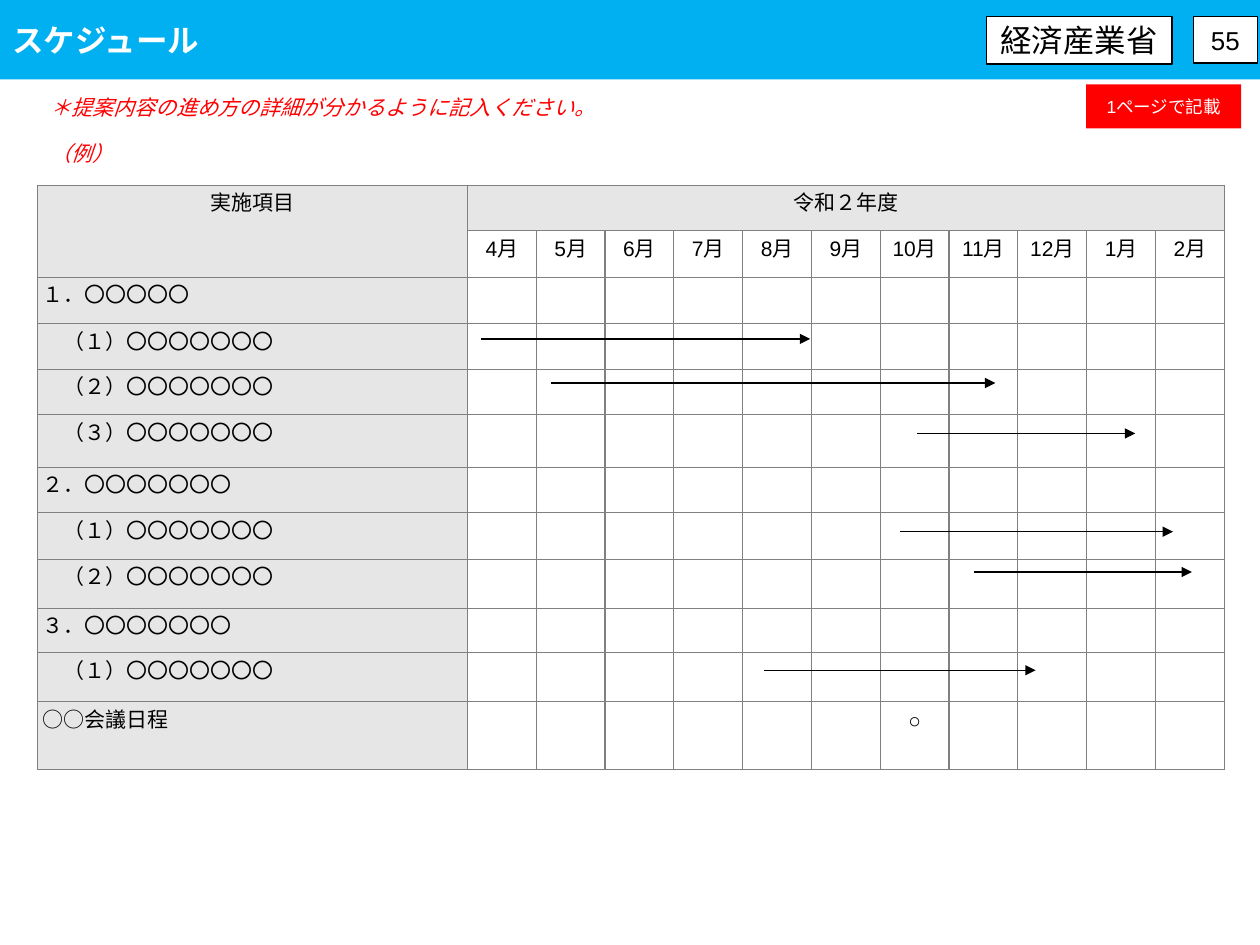
from lxml.etree import SubElement
from pptx import Presentation
from pptx.dml.color import RGBColor
from pptx.enum.shapes import MSO_CONNECTOR, MSO_SHAPE
from pptx.enum.text import MSO_ANCHOR, PP_ALIGN
from pptx.oxml import parse_xml
from pptx.oxml.ns import nsdecls, qn
from pptx.util import Inches, Pt

BLACK, WHITE, RED = "000000", "FFFFFF", "FF0000"
HEADER_BLUE, GRAY, BORDER_GRAY = "00B0F0", "E6E6E6", "808080"


def color(hex_string):
    return RGBColor.from_string(hex_string)


class SlideBuilder:
    font_name = "Arial"
    text_size = 12

    def __init__(self, slide):
        self.slide = slide

    def style(self, paragraph, size=None, text_color=BLACK, align=PP_ALIGN.LEFT,
              font_name=None, bold=False, italic=False):
        paragraph.alignment = align
        font = paragraph.font
        font.name = font_name or self.font_name
        font.size = Pt(size or self.text_size)
        font.bold, font.italic = bold, italic
        font.color.rgb = color(text_color)

    def box(self, text, left, top, width, height, fill, line_width=0,
            align=PP_ALIGN.CENTER, **text_style):
        shape = self.slide.shapes.add_shape(
            MSO_SHAPE.RECTANGLE, *map(Inches, (left, top, width, height)))
        shape.shadow.inherit = False
        shape.fill.solid()
        shape.fill.fore_color.rgb = color(fill)
        if line_width:
            shape.line.color.rgb = color(BLACK)
            shape.line.width = Pt(line_width)
        else:
            shape.line.fill.background()
        frame = shape.text_frame
        frame.vertical_anchor = MSO_ANCHOR.MIDDLE
        frame.text = text
        self.style(frame.paragraphs[0], align=align, **text_style)

    def notes(self, lines, left, top, width, height, gap):
        frame = self.slide.shapes.add_textbox(
            *map(Inches, (left, top, width, height))).text_frame
        frame.word_wrap = True
        frame.text = "\n".join(lines)
        for paragraph in frame.paragraphs:
            self.style(paragraph, text_color=RED, italic=True)
        for paragraph in frame.paragraphs[1:]:
            paragraph.space_before = Pt(gap)

    def table(self, left, top, column_widths, row_heights):
        table = self.slide.shapes.add_table(
            len(row_heights), len(column_widths), Inches(left), Inches(top),
            Inches(sum(column_widths)), Inches(sum(row_heights))).table
        table.first_row = table.horz_banding = False
        for column, width in zip(table.columns, column_widths):
            column.width = Inches(width)
        for row, height in zip(table.rows, row_heights):
            row.height = Inches(height)
            for cell in row.cells:
                self.cell(cell)
        return table

    def cell(self, cell, text="", fill=None, align=PP_ALIGN.CENTER):
        cell.margin_left = cell.margin_right = Inches(0.04)
        cell.margin_top = cell.margin_bottom = 0
        cell.text = text
        paragraph = cell.text_frame.paragraphs[0]
        paragraph.line_spacing = Pt(18.1)
        self.style(paragraph, align=align)
        properties = cell._tc.get_or_add_tcPr()
        for border in properties.findall("*"):
            properties.remove(border)
        for side in ("lnL", "lnR", "lnT", "lnB"):
            properties.append(parse_xml(
                f'<a:{side} {nsdecls("a")} w="{Pt(0.75)}"><a:solidFill>'
                f'<a:srgbClr val="{BORDER_GRAY}"/></a:solidFill></a:{side}>'))
        if fill:
            cell.fill.solid()
            cell.fill.fore_color.rgb = color(fill)
        else:
            cell.fill.background()

    def arrow(self, start, end, y):
        connector = self.slide.shapes.add_connector(
            MSO_CONNECTOR.STRAIGHT, *map(Inches, (start, y, end, y)))
        connector.line.color.rgb = color(BLACK)
        connector.line.width = Pt(0.75)
        SubElement(connector.line._get_or_add_ln(), qn("a:tailEnd"), type="triangle")
        SubElement(connector._element.spPr, qn("a:effectLst"))


def main():
    presentation = Presentation()
    presentation.slide_width, presentation.slide_height = Inches(10), Inches(7.5)
    builder = SlideBuilder(presentation.slides.add_slide(presentation.slide_layouts[6]))

    # Title bar and instructions
    builder.box("スケジュール", 0, 0, 10, 0.63, HEADER_BLUE, align=PP_ALIGN.LEFT,
                size=18, text_color=WHITE, font_name="Noto Sans CJK JP", bold=True)
    builder.notes(["＊提案内容の進め方の詳細が分かるように記入ください。", "（例）"],
                  0.3, 0.7, 9.42, 0.94, gap=12)
    builder.box("経済産業省", 7.83, 0.13, 1.47, 0.38, WHITE, line_width=1, size=18)

    # Schedule table
    months = [f"{month}月" for month in (*range(4, 13), 1, 2)]
    item = "〇〇〇〇〇〇〇"
    tasks = ["１．〇〇〇〇〇", f"　（１）{item}", f"　（２）{item}", f"　（３）{item}",
             f"２．{item}", f"　（１）{item}", f"　（２）{item}",
             f"３．{item}", f"　（１）{item}", "○○会議日程"]
    item_width, table_width = 3.41, 9.42
    month_width = (table_width - item_width) / len(months)
    row_heights = [0.36, 0.37, 0.37, 0.36, 0.36, 0.42, 0.36, 0.37, 0.39, 0.35, 0.39, 0.54]
    table = builder.table(0.3, 1.47, [item_width] + [month_width] * len(months), row_heights)
    table.cell(0, 0).merge(table.cell(1, 0))
    table.cell(0, 1).merge(table.cell(0, len(months)))
    builder.cell(table.cell(0, 0), "実施項目", GRAY)
    builder.cell(table.cell(0, 1), "令和２年度", GRAY)
    for column, month in enumerate(months, start=1):
        builder.cell(table.cell(1, column), month)
    for row, task in enumerate(tasks, start=2):
        builder.cell(table.cell(row, 0), task, GRAY, PP_ALIGN.JUSTIFY)
    meeting_column = months.index("10月") + 1
    builder.cell(table.cell(len(row_heights) - 1, meeting_column), "○")

    # Task periods
    for start, end, y in [(4.37, 7.9, 3.04), (7.73, 9.46, 4.54), (7.28, 9.01, 3.44),
                          (3.82, 6.43, 2.69), (6.06, 8.22, 5.32), (7.14, 9.31, 4.22)]:
        builder.arrow(start, end, y)

    # Page limit and page number
    builder.box("1ページで記載", 8.62, 0.67, 1.23, 0.35, RED, size=10, text_color=WHITE)
    builder.box("55", 9.47, 0.13, 0.51, 0.37, WHITE, line_width=0.75, size=14.8)

    presentation.save("out.pptx")


if __name__ == "__main__":
    main()
